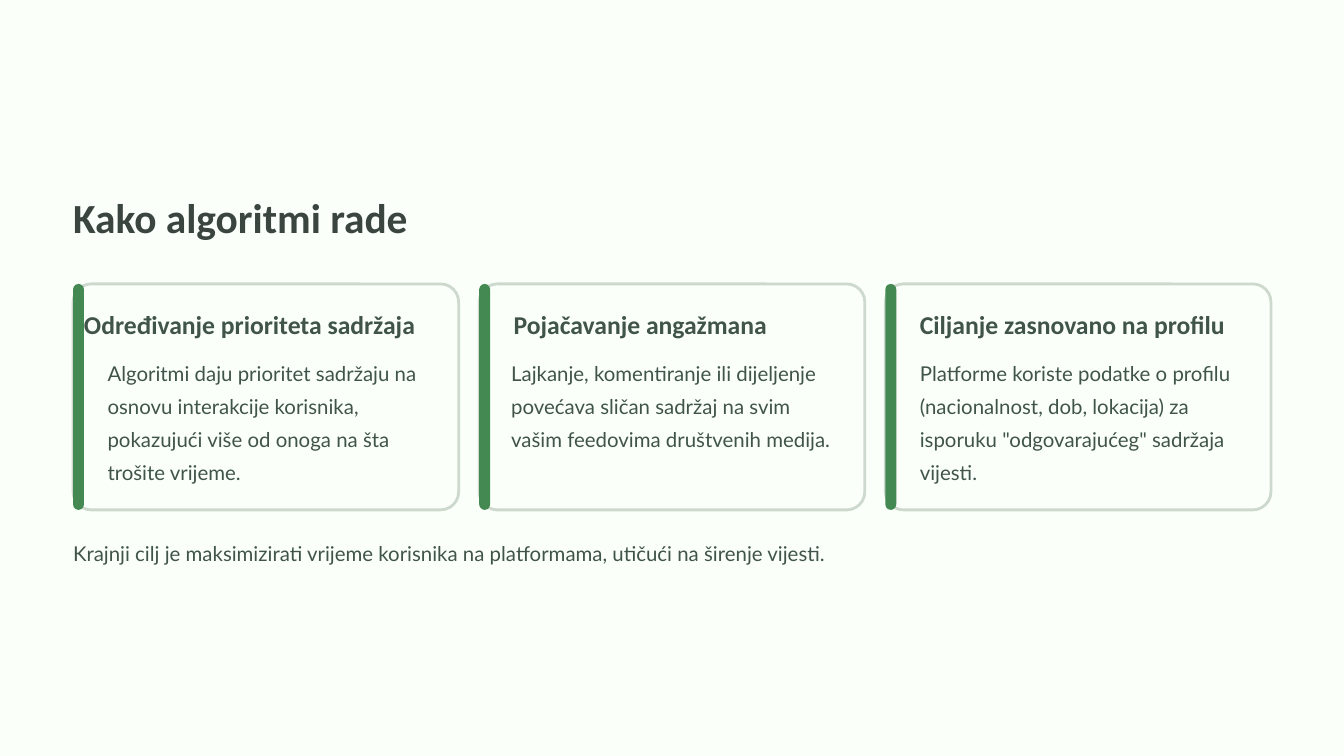
from dataclasses import dataclass

import pptx
import pptx.dml.color
import pptx.enum.shapes
import pptx.enum.text
import pptx.slide
import pptx.util

Inches = pptx.util.Inches
SHAPE = pptx.enum.shapes.MSO_SHAPE


@dataclass(frozen=True)
class TextStyle:
    font: str
    size: float
    spacing: float
    color: str
    bold: bool = False


@dataclass(frozen=True)
class Theme:
    background: str = "FAFFFA"
    border: str = "CED9CE"
    accent: str = "438951"
    border_width: float = 2.4
    title: TextStyle = TextStyle("Calibri", 35.5, 44.5, "3B4540", True)
    heading: TextStyle = TextStyle("Calibri", 22, 27.5, "405449", True)
    body: TextStyle = TextStyle("Lato", 17.5, 28.5, "405449")


@dataclass(frozen=True)
class Card:
    heading: str
    body: str
    heading_indent: float
    heading_width: float
    body_indent: float


THEME = Theme()
MARGIN = 0.87
CONTENT_WIDTH = 14.26
CARD_TOP = 3.38
CARD_WIDTH = 4.59
CARD_HEIGHT = 2.69
BAR_WIDTH = 0.13
BODY_WIDTH = 3.89

CARDS = [
    Card(
        "Određivanje prioriteta sadržaja",
        "Algoritmi daju prioritet sadržaju na osnovu interakcije korisnika, "
        "pokazujući više od onoga na šta trošite vrijeme.",
        0.13, 4.3, 0.41,
    ),
    Card(
        "Pojačavanje angažmana",
        "Lajkanje, komentiranje ili dijeljenje povećava sličan sadržaj "
        "na svim vašim feedovima društvenih medija.",
        0.41, 3.89, 0.38,
    ),
    Card(
        "Ciljanje zasnovano na profilu",
        "Platforme koriste podatke o profilu (nacionalnost, dob, lokacija) "
        "za isporuku \"odgovarajućeg\" sadržaja vijesti.",
        0.41, 3.89, 0.41,
    ),
]


def rgb(value: str) -> pptx.dml.color.RGBColor:
    return pptx.dml.color.RGBColor.from_string(value)


def add_text(s: pptx.slide.Slide, text: str, left: float, top: float, width: float,
             height: float, style: TextStyle, wrap: bool = False) -> None:
    box = s.shapes.add_textbox(Inches(left), Inches(top), Inches(width), Inches(height))
    tf = box.text_frame
    tf.margin_left = tf.margin_top = tf.margin_right = tf.margin_bottom = 0
    tf.word_wrap = wrap
    tf.vertical_anchor = pptx.enum.text.MSO_ANCHOR.TOP
    tf.text = text
    p = tf.paragraphs[0]
    p.alignment = pptx.enum.text.PP_ALIGN.LEFT
    p.line_spacing = pptx.util.Pt(style.spacing)
    r = p.runs[0]
    r.font.name = style.font
    r.font.size = pptx.util.Pt(style.size)
    r.font.bold = style.bold
    r.font.color.rgb = rgb(style.color)


def add_panel(s: pptx.slide.Slide, left: float, width: float, fill: str,
              rounding: float, border: str | None = None) -> None:
    sp = s.shapes.add_shape(SHAPE.ROUNDED_RECTANGLE, Inches(left), Inches(CARD_TOP),
                            Inches(width), Inches(CARD_HEIGHT))
    sp.shadow.inherit = False
    sp.adjustments[0] = rounding
    sp.fill.solid()
    sp.fill.fore_color.rgb = rgb(fill)
    if border:
        sp.line.color.rgb = rgb(border)
        sp.line.width = pptx.util.Pt(THEME.border_width)
    else:
        sp.line.fill.background()


def add_card(s: pptx.slide.Slide, card: Card, left: float) -> None:
    add_panel(s, left, CARD_WIDTH, THEME.background, 0.08, THEME.border)
    add_panel(s, left, BAR_WIDTH, THEME.accent, 0.5)
    add_text(s, card.heading, left + card.heading_indent, 3.66, card.heading_width, 0.39,
             THEME.heading)
    add_text(s, card.body, left + card.body_indent, 4.19, BODY_WIDTH, 1.59,
             THEME.body, wrap=True)


def main() -> None:
    prs = pptx.Presentation()
    prs.slide_width = Inches(16)
    prs.slide_height = Inches(9)
    s = prs.slides.add_slide(prs.slide_layouts[6])
    s.background.fill.solid()
    s.background.fill.fore_color.rgb = rgb(THEME.background)

    add_text(s, "Kako algoritmi rade", MARGIN, 2.26, 5.66, 0.62, THEME.title)
    pitch = (CONTENT_WIDTH - CARD_WIDTH) / (len(CARDS) - 1)
    for i, card in enumerate(CARDS):
        add_card(s, card, MARGIN + i * pitch)
    add_text(s, "Krajnji cilj je maksimizirati vrijeme korisnika na platformama, "
             "utičući na širenje vijesti.", MARGIN, 6.34, CONTENT_WIDTH, 0.4, THEME.body)
    prs.save("out.pptx")


if __name__ == "__main__":
    main()
